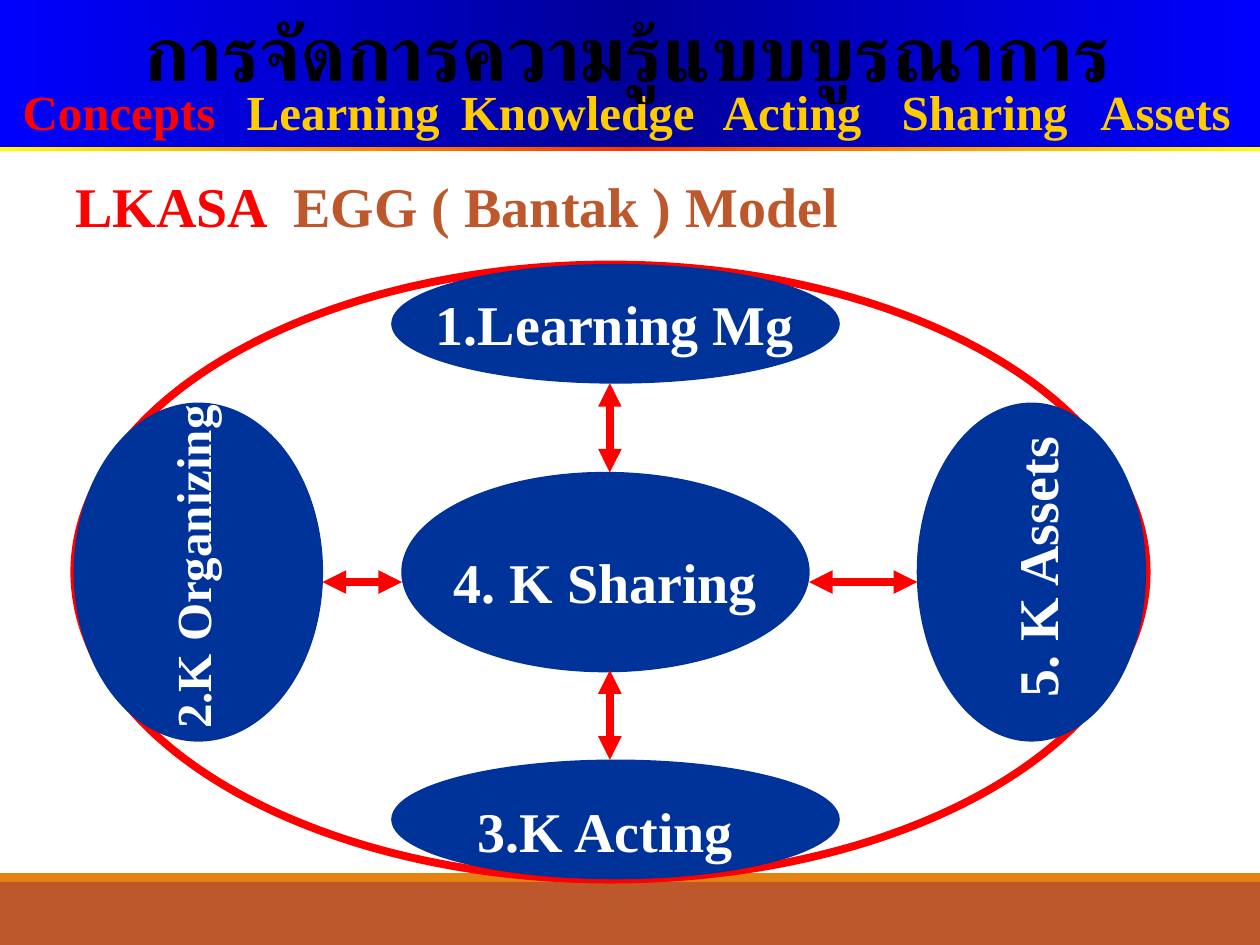
from copy import deepcopy
from lxml.etree import SubElement
from pptx import Presentation
from pptx.dml.color import RGBColor
from pptx.enum.shapes import MSO_CONNECTOR, MSO_SHAPE
from pptx.enum.text import MSO_ANCHOR, PP_ALIGN
from pptx.oxml.ns import qn
from pptx.util import Pt

HUES = {
    "red": "FF0000", "gold": "FFCC00", "rust": "BD582C", "orange": "E48312",
    "navy": "003399", "white": "FFFFFF", "black": "000000",
    "yellow": "FFFF00", "flame": "FF3300", "blue": "0000FF", "deep": "000099",
}
SERIF = "Times New Roman"


def hue(name):
    return RGBColor.from_string(HUES[name])


def add_form(slide, kind, box, fill=None, line=None, width=0.75):
    form = slide.shapes.add_shape(kind, *map(Pt, box))
    form.shadow.inherit = False
    if fill:
        form.fill.solid()
        form.fill.fore_color.rgb = hue(fill)
    else:
        form.fill.background()
    if line:
        form.line.color.rgb = hue(line)
        form.line.width = Pt(width)
    else:
        form.line.fill.background()
    return form


def add_blend(slide, box, edge, mid):
    form = add_form(slide, MSO_SHAPE.RECTANGLE, box)
    form.fill.gradient()
    form.fill.gradient_angle = 0
    stops = form._element.spPr.find(qn("a:gradFill")).find(qn("a:gsLst"))
    stops.insert(1, deepcopy(stops[0]))
    for stop, place, name in zip(form.fill.gradient_stops, (0, 0.5, 1), (edge, mid, edge)):
        stop.position = place
        stop.color.rgb = hue(name)


def add_text(slide, box, runs, size, font=SERIF, align=PP_ALIGN.CENTER, turn=0):
    item = slide.shapes.add_textbox(*map(Pt, box))
    item.rotation = turn
    frame = item.text_frame
    frame.word_wrap = not turn
    frame.vertical_anchor = MSO_ANCHOR.MIDDLE if turn else MSO_ANCHOR.TOP
    para = frame.paragraphs[0]
    para.alignment = align
    for text, name in runs:
        run = para.add_run()
        run.text = text
        run.font.size = Pt(size)
        run.font.name = font
        run.font.bold = True
        run.font.color.rgb = hue(name)
        SubElement(run._r.rPr, qn("a:cs")).set("typeface", font)


def add_arrow(slide, start, end):
    arrow = slide.shapes.add_connector(MSO_CONNECTOR.STRAIGHT, *map(Pt, start + end))
    arrow.line.color.rgb = hue("red")
    arrow.line.width = Pt(4.5)
    line = arrow.line._get_or_add_ln()
    for tag in ("a:headEnd", "a:tailEnd"):
        SubElement(line, qn(tag)).set("type", "triangle")
    SubElement(arrow._element.spPr, qn("a:effectLst"))


def add_foot(slide, box):
    left, top, width, height = box
    add_form(slide, MSO_SHAPE.RECTANGLE, (left, top + 5, width, height - 5), "rust")
    add_form(slide, MSO_SHAPE.RECTANGLE, (left, top, width, 5), "orange")


def add_head(slide, box):
    left, top, width, height = box
    add_blend(slide, (left, top + height - 5.8, width, 5.8), "yellow", "flame")
    add_blend(slide, (left, top, width, height - 2.2), "blue", "deep")
    words = [
        ("Concepts", 5.8, 131.8, "red", PP_ALIGN.LEFT),
        ("Learning", 133.9, 136.1, "gold", PP_ALIGN.LEFT),
        ("Knowledge", 252.7, 154.8, "gold", PP_ALIGN.CENTER),
        ("Acting", 395.3, 114.5, "gold", PP_ALIGN.CENTER),
        ("Sharing", 501.8, 121.7, "gold", PP_ALIGN.CENTER),
        ("Assets", 614.9, 102.2, "gold", PP_ALIGN.CENTER),
    ]
    for word, x, wide, name, align in words:
        add_text(slide, (left + x, top + 43.2, wide, 41), [(word, name)], 28, align=align)
    add_text(slide, (left + 5.8, top - 0.7, width - 14.4, 59.8),
             [("การจัดการความรู้แบบบูรณาการ", "black")], 44, "Arial")


def add_egg(slide, box):
    left, top, width, height = box

    def place(x, y, *size):
        return (left + x, top + y) + size

    add_form(slide, MSO_SHAPE.OVAL, box, line="red", width=4.5)
    ovals = [
        (187.2, 118.8, 232.6, 113.8),
        (181.4, 0, 255.6, 67.7),
        (181.4, height - 68.2, 255.6, 67.7),
        (0, 79.2, 141.8, 193),
        (width - 131, 79.2, 130.3, 193),
    ]
    for oval in ovals:
        add_form(slide, MSO_SHAPE.OVAL, place(*oval), "navy", "navy")
    labels = [
        ("1.Learning Mg", (175.7, 10.8, 266.4, 45.4), 32, 0),
        ("3.K Acting", (198.7, 300.2, 209.5, 45.4), 32, 0),
        ("4. K Sharing", (198.7, 158.4, 209.5, 45.4), 32, 0),
        ("2.K Organizing", (-38.2, 154.8, 210.2, 36), 28, 270),
        ("5. K Assets", (444.2, 154.8, 210.2, 36), 32, 270),
    ]
    for text, spot, size, turn in labels:
        add_text(slide, place(*spot), [(text, "white")], size, turn=turn)
    mid, row = 306, 181.4
    arrows = [
        ((mid, 67.7), (mid, 118.8)),
        ((mid, 283), (mid, 231.8)),
        ((141.8, row), (187.2, row)),
        ((419.8, row), (481.7, row)),
    ]
    for start, end in arrows:
        add_arrow(slide, place(*start), place(*end))


def main():
    deck = Presentation()
    deck.slide_width, deck.slide_height = Pt(720), Pt(540)
    slide = deck.slides.add_slide(deck.slide_layouts[6])
    add_foot(slide, (0, 499, 720, 41))
    add_head(slide, (0, 0, 720, 86.4))
    add_text(slide, (36, 94.3, 664.6, 45.4),
             [("LKASA ", "red"), (" EGG ( Bantak ) Model", "rust")], 32, align=PP_ALIGN.LEFT)
    add_egg(slide, (42.5, 151.2, 612.7, 351.4))
    deck.save("out.pptx")


if __name__ == "__main__":
    main()
